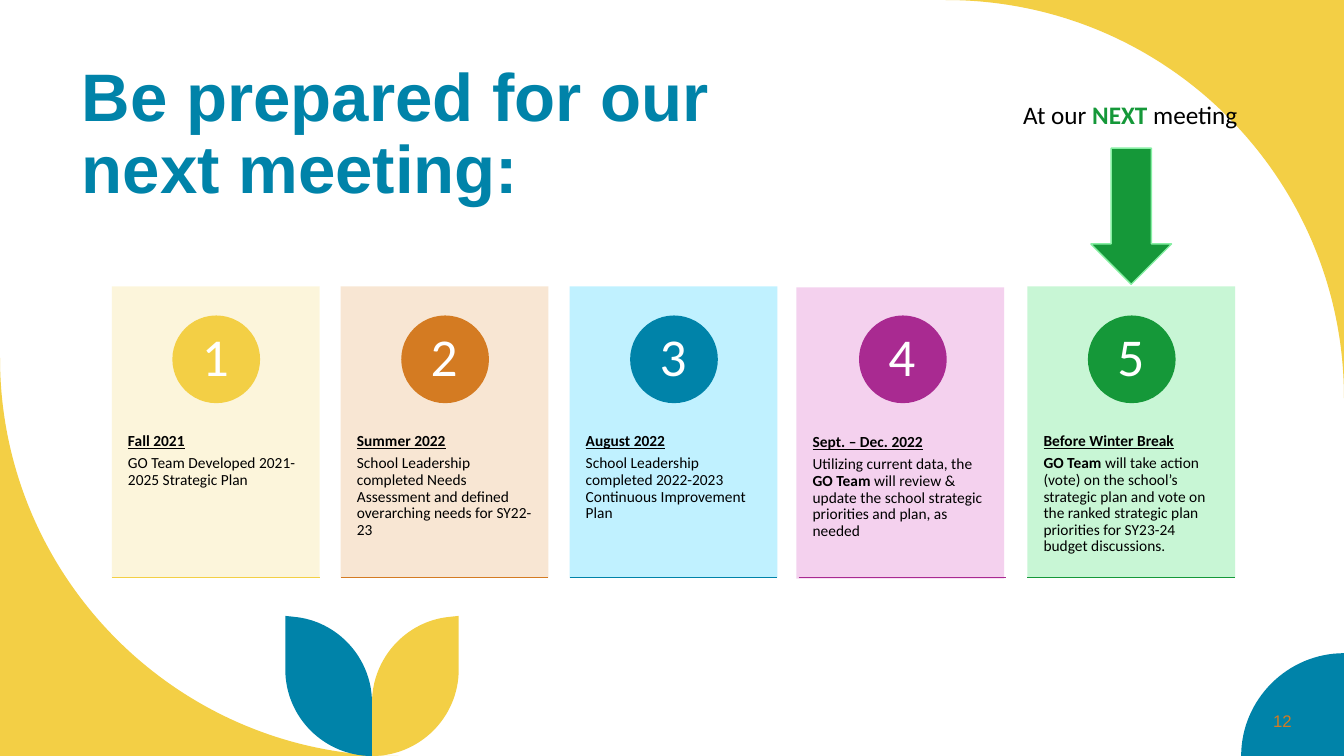
from pptx import Presentation
from pptx.dml.color import RGBColor
from pptx.enum import shapes as sh, text as tx
from pptx.oxml.ns import qn
from pptx.util import Inches, Pt
from lxml import etree

WHITE = RGBColor(0xFF, 0xFF, 0xFF)
BLACK = RGBColor(0, 0, 0)
GOLD = RGBColor(0xF3, 0xCF, 0x45)
ORANGE = RGBColor(0xD4, 0x7B, 0x22)
BLUE = RGBColor(0x00, 0x83, 0xA9)
PURPLE = RGBColor(0xA9, 0x2A, 0x91)
GREEN = RGBColor(0x15, 0x98, 0x39)
MINT = RGBColor(0x86, 0xEF, 0xA3)
CREAM = RGBColor(0xFC, 0xF5, 0xD8)
PEACH = RGBColor(0xF8, 0xE4, 0xCF)
SKY = RGBColor(0xBA, 0xF0, 0xFF)
PINK = RGBColor(0xF3, 0xCD, 0xED)
LIME = RGBColor(0xC3, 0xF6, 0xD1)

LEFT, TOP, STEP, WIDTH, HEIGHT = 1.11, 2.84, 2.27, 2.06, 2.89
DOT = 0.87

# Heading, body runs as (text, bold), strong colour, pale colour, panel nudge
CARDS = [
    ("Fall 2021", [("GO Team Developed 2021-2025 Strategic Plan", False)],
     GOLD, CREAM, (0, 0)),
    ("Summer 2022", [("School Leadership completed Needs Assessment and defined "
                      "overarching needs for SY22-23", False)],
     ORANGE, PEACH, (0, 0)),
    ("August 2022", [("School Leadership completed 2022-2023 Continuous "
                      "Improvement Plan", False)],
     BLUE, SKY, (0, 0)),
    ("Sept. – Dec. 2022", [("Utilizing current data, the ", False), ("GO Team ", True),
                           ("will review & update the school strategic priorities "
                            "and plan, as needed", False)],
     PURPLE, PINK, (-0.02, 0.01)),
    ("Before Winter Break", [("GO Team ", True),
                             ("will take action (vote) on the school’s strategic plan "
                              "and vote on the ranked strategic plan priorities for "
                              "SY23-24 budget discussions.", False)],
     GREEN, LIME, (0, 0)),
]

# A pair is a corner; six numbers are a cubic curve from the point before
CORNER = [(13.33, 0), (13.33, 3.95), (13.33, 1.77, 11.57, 0, 9.38, 0)]
SWEEP = [(0, 3.55), (0, 5.73, 1.77, 7.5, 3.95, 7.5), (0, 7.5)]
QUARTER = [(13.33, 7.5), (13.33, 6.48), (12.77, 6.48, 12.31, 6.94, 12.31, 7.5)]
LEAF = [(4.55, 6.11), (4.55, 6.64), (4.55, 7.12, 4.16, 7.5, 3.69, 7.5),
        (3.69, 6.97), (3.69, 6.53, 4.03, 6.16, 4.46, 6.12)]
STEM = 3.69


def mirror(path, axis):
    return [tuple(2 * axis - v if i % 2 == 0 else v for i, v in enumerate(step))
            for step in path]


class Board:
    def __init__(self, slide, head="Arial", body="Calibri"):
        self.slide, self.head, self.body = slide, head, body
        self.items = slide.shapes

    def paint(self, shape, fill, line=None):
        shape.shadow.inherit = False
        shape.fill.solid()
        shape.fill.fore_color.rgb = fill
        if line is None:
            shape.line.fill.background()
        else:
            shape.line.color.rgb = line
            shape.line.width = Pt(1)
        return shape

    def outline(self, path, fill):
        """Draw a closed outline, joining each curve's three points into one."""
        pts = [(Inches(step[i]), Inches(step[i + 1]))
               for step in path for i in range(0, len(step), 2)]
        form = self.items.build_freeform(*pts[0])
        form.add_line_segments(pts[1:])
        shape = self.paint(form.convert_to_shape(), fill)
        legs = iter(list(shape.element.iter(qn("a:lnTo"))))
        for step in path[1:]:
            leg = next(legs)
            if len(step) == 6:
                leg.tag = qn("a:cubicBezTo")
                for _ in range(2):
                    more = next(legs)
                    leg.append(more[0])
                    more.getparent().remove(more)

    def shape(self, kind, x, y, w, h, fill, line=None, alpha=None):
        item = self.items.add_shape(kind, Inches(x), Inches(y), Inches(w), Inches(h))
        self.paint(item, fill, line)
        if alpha:
            tone = item.element.spPr.find(qn("a:solidFill"))[0]
            etree.SubElement(tone, qn("a:alpha")).set("val", str(alpha * 1000))

    def rule(self, x, y, w, color):
        line = self.items.add_connector(sh.MSO_CONNECTOR.STRAIGHT, Inches(x), Inches(y),
                                        Inches(x + w), Inches(y))
        line.line.color.rgb = color
        line.line.width = Pt(1)
        etree.SubElement(line.element.spPr, qn("a:effectLst"))

    def style(self, par, size, color, font=None, bold=None, align=tx.PP_ALIGN.LEFT,
              space=None):
        par.alignment = align
        par.line_spacing = space
        face = par.font
        face.name, face.size, face.bold = font or self.body, Pt(size), bold
        face.color.rgb = color

    def box(self, x, y, w, h, pad=(0.1, 0.05), anchor=tx.MSO_ANCHOR.TOP):
        item = self.items.add_textbox(Inches(x), Inches(y), Inches(w), Inches(h))
        frame = item.text_frame
        frame.word_wrap = True
        frame.vertical_anchor = anchor
        frame.margin_left = frame.margin_right = Inches(pad[0])
        frame.margin_top = frame.margin_bottom = Inches(pad[1])
        return frame

    def title(self, words, x, y, w, h):
        item = self.items.title
        item.left, item.top, item.width, item.height = map(Inches, (x, y, w, h))
        frame = item.text_frame
        frame.text = words
        frame.auto_size = tx.MSO_AUTO_SIZE.NONE
        frame.vertical_anchor = tx.MSO_ANCHOR.MIDDLE
        self.style(frame.paragraphs[0], 48, BLUE, self.head, True, space=0.9)

    def label(self, words, x, y, w, h, size, color, font=None,
              align=tx.PP_ALIGN.CENTER, pad=(0.1, 0.05), space=None):
        par = self.box(x, y, w, h, pad, tx.MSO_ANCHOR.MIDDLE).paragraphs[0]
        par.text = words
        self.style(par, size, color, font, align=align, space=space)

    def card(self, num, head, body, color, pale, nudge):
        x = LEFT + STEP * (num - 1)
        left, top = x + nudge[0], TOP + nudge[1]
        self.shape(sh.MSO_SHAPE.RECTANGLE, left, top, WIDTH, HEIGHT, pale, alpha=90)
        frame = self.box(left, top + 1.1, WIDTH, 1.73, (0.16, 0.36))
        frame.margin_bottom = Inches(0.05)
        par = frame.paragraphs[0]
        par.text = head
        self.style(par, 11, BLACK, bold=True, space=0.9)
        par.font.underline = True
        par = frame.add_paragraph()
        for words, bold in body:
            run = par.add_run()
            run.text, run.font.bold = words, bold
        self.style(par, 11, BLACK, space=0.9)
        par.space_before = Pt(3.9)
        self.shape(sh.MSO_SHAPE.OVAL, x + 0.6, TOP + 0.29, DOT, DOT, color)
        self.label(str(num), x + 0.72, TOP + 0.42, 0.61, 0.61, 38, WHITE,
                   pad=(0.07, 0.01), space=0.9)
        self.rule(x, TOP + HEIGHT, WIDTH, color)


def main():
    deck = Presentation()
    deck.slide_width, deck.slide_height = Inches(13.33), Inches(7.5)
    board = Board(deck.slides.add_slide(deck.slide_layouts[5]))

    for path, fill in ((CORNER, GOLD), (SWEEP, GOLD), (QUARTER, BLUE),
                       (LEAF, GOLD), (mirror(LEAF, STEM), BLUE)):
        board.outline(path, fill)
    board.title("Be prepared for our next meeting:", 0.71, 0.62, 6.89, 1.45)
    board.label("12", 11.1, 6.95, 1.81, 0.4, 12, ORANGE, board.head, tx.PP_ALIGN.RIGHT)

    for num, card in enumerate(CARDS, 1):
        board.card(num, *card)

    board.shape(sh.MSO_SHAPE.DOWN_ARROW, 10.82, 1.47, 0.8, 1.35, GREEN, MINT)
    par = board.box(9.8, 0.94, 2.82, 0.4).paragraphs[0]
    for words in ("At our ", "NEXT ", "meeting"):
        par.add_run().text = words
    board.style(par, 18, BLACK, align=tx.PP_ALIGN.CENTER)
    accent = par.runs[1].font
    accent.bold = True
    accent.color.rgb = GREEN

    deck.save("out.pptx")


if __name__ == "__main__":
    main()
